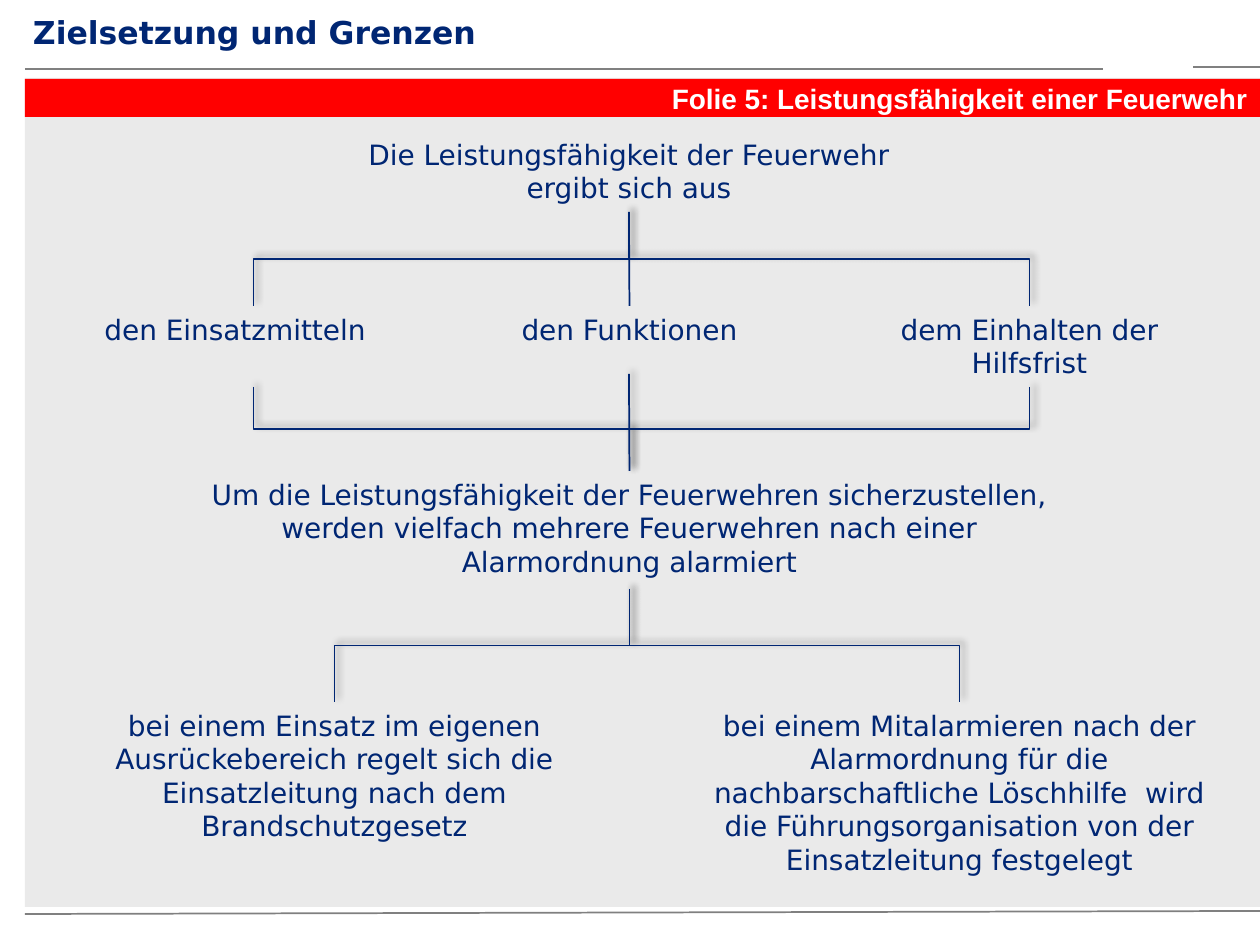
import dataclasses

import lxml.etree
import pptx
import pptx.dml.color
import pptx.enum.shapes
import pptx.enum.text
import pptx.oxml
import pptx.oxml.ns
import pptx.util

ALIGN = pptx.enum.text.PP_ALIGN
CONNECTOR = pptx.enum.shapes.MSO_CONNECTOR
TOP, BOTTOM = 0, 2
SHADOW = (
    '<a:effectLst xmlns:a="http://schemas.openxmlformats.org/drawingml/2006/main">'
    '<a:outerShdw blurRad="50800" dist="38100" dir="18900000" algn="bl" rotWithShape="0">'
    '<a:srgbClr val="000000"><a:alpha val="40000"/></a:srgbClr>'
    "</a:outerShdw></a:effectLst>"
)


@dataclasses.dataclass(frozen=True)
class Theme:
    """Colours, fonts and type sizes of the slide."""

    navy: str = "002673"
    red: str = "FF0000"
    white: str = "FFFFFF"
    panel: str = "EAEAEA"
    rule: str = "808080"
    body_font: str = "DejaVu Sans"
    banner_font: str = "Arial"
    title_size: int = 18
    body_size: int = 16


THEME = Theme()


def px(length):
    """Turn a length in px into EMU."""
    return pptx.util.Emu(round(length * 914400 / 126))


def rgb(value):
    """Return the colour for a hex value."""
    return pptx.dml.color.RGBColor.from_string(value)


def style_text(frame, text, size, color, font, bold, align):
    """Write the text and format every run alike."""
    frame.word_wrap = True
    frame.text = text
    for paragraph in frame.paragraphs:
        paragraph.alignment = align
        for run in paragraph.runs:
            run.font.size = pptx.util.Pt(size)
            run.font.name = font
            run.font.bold = bold
            run.font.color.rgb = rgb(color)


def add_statement(slide, box, offset, text, align=ALIGN.CENTER):
    """Add a body text at an offset (left, top, width, height) in the box."""
    left, top, width, height = offset
    statement = slide.shapes.add_textbox(
        px(box[0] + left), px(box[1] + top), px(width), px(height))
    style_text(statement.text_frame, text, THEME.body_size, THEME.navy,
               THEME.body_font, False, align)
    return statement


def add_block(slide, left, top, width, height, color):
    """Add a plain filled rectangle."""
    block = slide.shapes.add_shape(
        pptx.enum.shapes.MSO_SHAPE.RECTANGLE, px(left), px(top), px(width), px(height))
    block.shadow.inherit = False
    block.fill.solid()
    block.fill.fore_color.rgb = rgb(color)
    block.line.fill.background()
    return block


def add_line(slide, kind, start, end, color, shadow=False):
    """Add a one-point connector between two points in px."""
    line = slide.shapes.add_connector(kind, *(px(value) for value in start + end))
    line.line.color.rgb = rgb(color)
    line.line.width = pptx.util.Pt(1)
    properties = line._element.spPr
    if shadow:
        properties.append(pptx.oxml.parse_xml(SHADOW))
    else:
        lxml.etree.SubElement(properties, pptx.oxml.ns.qn("a:effectLst"))
    return line


def join_bent(slide, upper, lower):
    """Join two statements with an elbow that leaves and arrives vertically."""
    elbow = add_line(slide, CONNECTOR.ELBOW, (0, 0), (0, 0), THEME.navy, shadow=True)
    elbow.begin_connect(upper, BOTTOM)
    elbow.end_connect(lower, TOP)
    start_x, start_y = upper.left + upper.width // 2, upper.top + upper.height
    end_x, end_y = lower.left + lower.width // 2, lower.top
    span, drop = abs(end_x - start_x), end_y - start_y
    elbow.left = (start_x + end_x - drop) // 2
    elbow.top = (start_y + end_y - span) // 2
    elbow.width, elbow.height = drop, span
    rightward = end_x > start_x
    frame = elbow._element.spPr.find(pptx.oxml.ns.qn("a:xfrm"))
    frame.set("rot", "16200000" if rightward else "5400000")
    frame.set("flipH", "1" if rightward else "0")
    frame.set("flipV", "0")


def draw_frame(slide, box):
    """Draw the grey panel and the rules above and below it."""
    left, top, width, height = box
    right, bottom = left + width, top + height
    add_block(slide, *box, THEME.panel)
    for start, end in (
        ((left, top - 9), (left + 1078, top - 9)),
        ((left, bottom + 7), (right, bottom + 4)),
        ((right, top - 11), (right - 67, top - 11)),
    ):
        add_line(slide, CONNECTOR.STRAIGHT, start, end, THEME.rule)


def draw_title(slide, box):
    """Write the slide title."""
    title = slide.shapes.add_textbox(*(px(value) for value in box))
    frame = title.text_frame
    frame.margin_left = frame.margin_right = frame.margin_top = frame.margin_bottom = 0
    style_text(frame, "Zielsetzung und Grenzen", THEME.title_size, THEME.navy,
               THEME.body_font, True, ALIGN.LEFT)


def draw_banner(slide, box):
    """Draw the red banner with the slide number and topic."""
    banner = add_block(slide, *box, THEME.red)
    banner.text_frame.vertical_anchor = pptx.enum.text.MSO_ANCHOR.MIDDLE
    style_text(banner.text_frame, "Folie 5: Leistungsfähigkeit einer Feuerwehr",
               THEME.body_size, THEME.white, THEME.banner_font, True, ALIGN.RIGHT)


def draw_factors(slide, box):
    """Draw the opening statement and its three factors, and return the factors."""
    opening = add_statement(slide, box, (222, 0, 630, 81),
                            "Die Leistungsfähigkeit der Feuerwehr ergibt sich aus")
    resources = add_statement(slide, box, (0, 175, 323, 81),
                              "den Einsatzmitteln", ALIGN.LEFT)
    functions = add_statement(slide, box, (401, 175, 273, 81), "den Funktionen")
    response = add_statement(slide, box, (775, 175, 325, 81),
                             "dem Einhalten der Hilfsfrist")
    join_bent(slide, opening, resources)
    join_bent(slide, opening, response)
    stem = add_line(slide, CONNECTOR.STRAIGHT, (0, 0), (0, 0), THEME.navy)
    stem.begin_connect(opening, BOTTOM)
    stem.end_connect(functions, TOP)
    return resources, response


def draw_summary(slide, box, outer_factors):
    """Draw the middle statement with the lines that lead into it."""
    left, top, width, height = box
    summary = add_statement(
        slide, box, (0, 0, width, height),
        "Um die Leistungsfähigkeit der Feuerwehren sicherzustellen,\n"
        "werden vielfach mehrere Feuerwehren nach einer\n"
        "Alarmordnung alarmiert")
    for factor in outer_factors:
        join_bent(slide, factor, summary)
    center = left + width // 2
    stem = add_line(slide, CONNECTOR.STRAIGHT, (center, top - 97), (center, top),
                    THEME.navy, shadow=True)
    stem.end_connect(summary, TOP)
    return summary


def draw_outcomes(slide, box, summary):
    """Draw the two cases that follow from the summary."""
    own_area = add_statement(
        slide, box, (0, 0, 591, 149),
        "bei einem Einsatz im eigenen Ausrückebereich regelt sich die "
        "Einsatzleitung nach dem Brandschutzgesetz")
    mutual_aid = add_statement(
        slide, box, (640, 0, 561, 183),
        "bei einem Mitalarmieren nach der Alarmordnung für die nachbarschaftliche "
        "Löschhilfe  wird die Führungsorganisation von der Einsatzleitung festgelegt")
    for outcome in (own_area, mutual_aid):
        join_bent(slide, summary, outcome)


def main():
    """Build the slide and save it."""
    deck = pptx.Presentation()
    deck.slide_width, deck.slide_height = px(1260), px(945)
    slide = deck.slides.add_slide(deck.slide_layouts[6])
    draw_frame(slide, (25, 78, 1235, 829))
    draw_title(slide, (33, 13, 1080, 52))
    draw_banner(slide, (25, 79, 1235, 38))
    outer_factors = draw_factors(slide, (92, 131, 1100, 256))
    summary = draw_summary(slide, (108, 471, 1043, 118), outer_factors)
    draw_outcomes(slide, (39, 702, 1201, 183), summary)
    deck.save("out.pptx")


if __name__ == "__main__":
    main()
